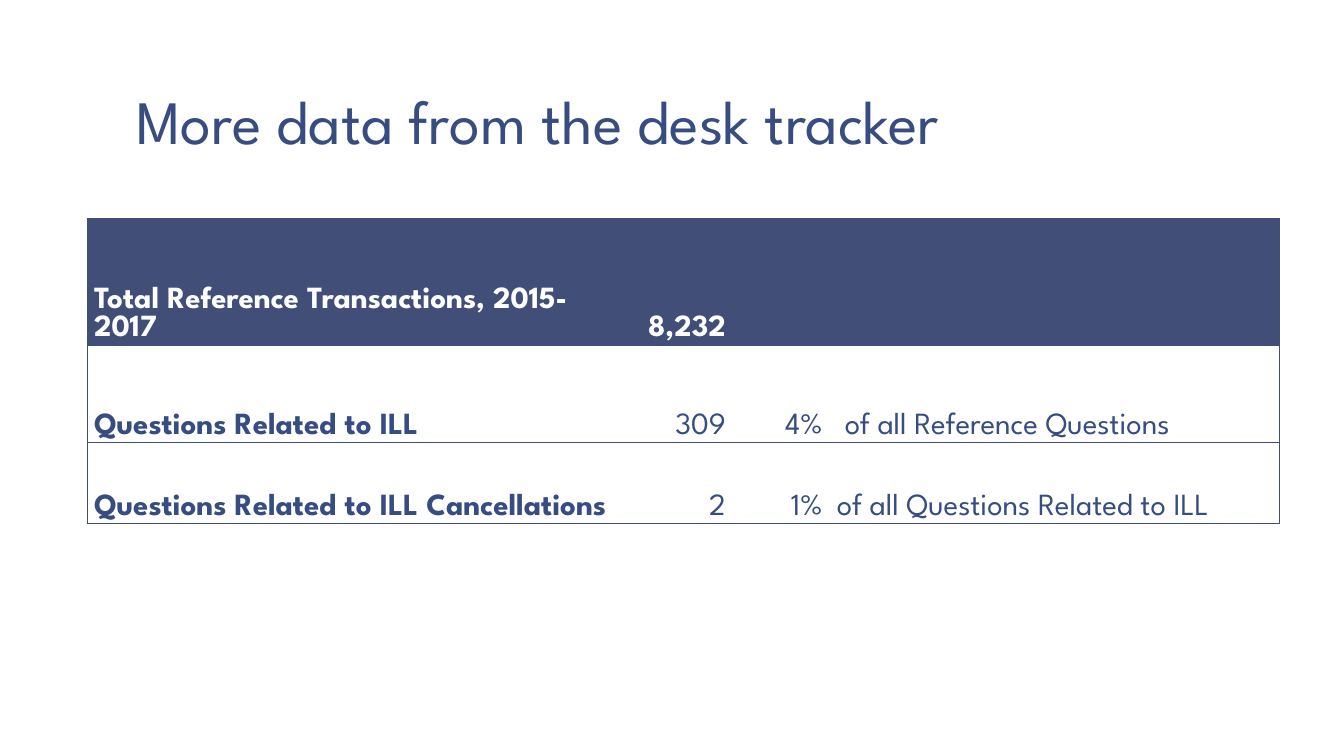
from lxml.etree import SubElement
from pptx import Presentation
from pptx.dml.color import RGBColor
from pptx.enum.text import MSO_ANCHOR as Anchor, MSO_AUTO_SIZE as AutoSize, PP_ALIGN as Align
from pptx.oxml.ns import qn
from pptx.util import Cm, Pt

FONT = "League Spartan"
INK, NAVY, WHITE = "374C81", "414E77", "FFFFFF"
COLUMN_WIDTHS = (13.77, 2.51, 2.44, 11.33)
ROW_HEIGHTS = (3.18, 2.46, 2.03)
STATISTICS = (
    ("Total Reference Transactions, 2015-2017", "8,232", "", ""),
    ("Questions Related to ILL", "309", "4%", "of all Reference Questions"),
    ("Questions Related to ILL Cancellations", "2", "1%", "of all Questions Related to ILL"),
)


def color(hex_value):
    """Return the colour for a hex string."""
    return RGBColor.from_string(hex_value)


def style(paragraph, size, hex_value, bold=False):
    """Format every run of a paragraph."""
    for run in paragraph.runs:
        run.font.name = FONT
        run.font.size = Pt(size)
        run.font.bold = bold
        run.font.color.rgb = color(hex_value)


def set_border(cell, side, visible):
    """Draw or hide one border of a cell."""
    border = SubElement(cell._tc.get_or_add_tcPr(), qn(f"a:ln{side}"), w=str(Pt(0.5)))
    if visible:
        solid = SubElement(border, qn("a:solidFill"))
        SubElement(solid, qn("a:srgbClr"), val=NAVY)
    else:
        SubElement(border, qn("a:noFill"))


def add_title(slide, left, top, width, height):
    """Place the slide heading in the title placeholder."""
    heading = slide.shapes.title
    heading.left, heading.top, heading.width, heading.height = left, top, width, height
    frame = heading.text_frame
    frame.text = "More data from the desk tracker"
    frame.word_wrap = True
    frame.auto_size = AutoSize.NONE
    frame.vertical_anchor = Anchor.BOTTOM
    frame.margin_left = frame.margin_right = Cm(0.33)
    frame.margin_top = frame.margin_bottom = Cm(0.18)
    paragraph = frame.paragraphs[0]
    paragraph.alignment = Align.LEFT
    paragraph.line_spacing = 0.85
    style(paragraph, 44, INK)


def fill_cell(cell, text, row, column):
    """Write and format one statistic according to its place in the table."""
    header = row == 0
    last_column = len(COLUMN_WIDTHS) - 1
    for side, visible in (("L", column == 0), ("R", column == last_column), ("T", True), ("B", True)):
        set_border(cell, side, visible)
    if header:
        cell.fill.solid()
        cell.fill.fore_color.rgb = color(NAVY)
    else:
        cell.fill.background()
    cell.vertical_anchor = Anchor.BOTTOM
    cell.margin_left = Cm(0.38 if (row, column) == (1, last_column) else 0.18)
    cell.margin_right = Cm(0.18)
    cell.margin_top = cell.margin_bottom = Cm(0.03)
    cell.text_frame.text = text
    paragraph = cell.text_frame.paragraphs[0]
    paragraph.alignment = Align.RIGHT if column in (1, 2) else Align.LEFT
    style(paragraph, 22, WHITE if header else INK, header or column == 0)


def add_statistics(slide, left, top, width, height):
    """Place the table of reference statistics."""
    table = slide.shapes.add_table(
        len(ROW_HEIGHTS), len(COLUMN_WIDTHS), left, top, width, height).table
    table.horz_banding = False
    for column, column_width in zip(table.columns, COLUMN_WIDTHS):
        column.width = Cm(column_width)
    for row, row_height in zip(table.rows, ROW_HEIGHTS):
        row.height = Cm(row_height)
    for row, entries in enumerate(STATISTICS):
        for column, text in enumerate(entries):
            fill_cell(table.cell(row, column), text, row, column)


def main():
    """Build and save the slide."""
    deck = Presentation()
    deck.slide_width, deck.slide_height = Cm(33.87), Cm(19.05)
    slide = deck.slides.add_slide(deck.slide_layouts[5])
    slide.background.fill.solid()
    slide.background.fill.fore_color.rgb = color(WHITE)
    add_title(slide, Cm(3.1), Cm(0.24), Cm(28.22), Cm(3.89))
    add_statistics(slide, Cm(2.19), Cm(5.51), Cm(sum(COLUMN_WIDTHS)), Cm(sum(ROW_HEIGHTS)))
    deck.save("out.pptx")


if __name__ == "__main__":
    main()
